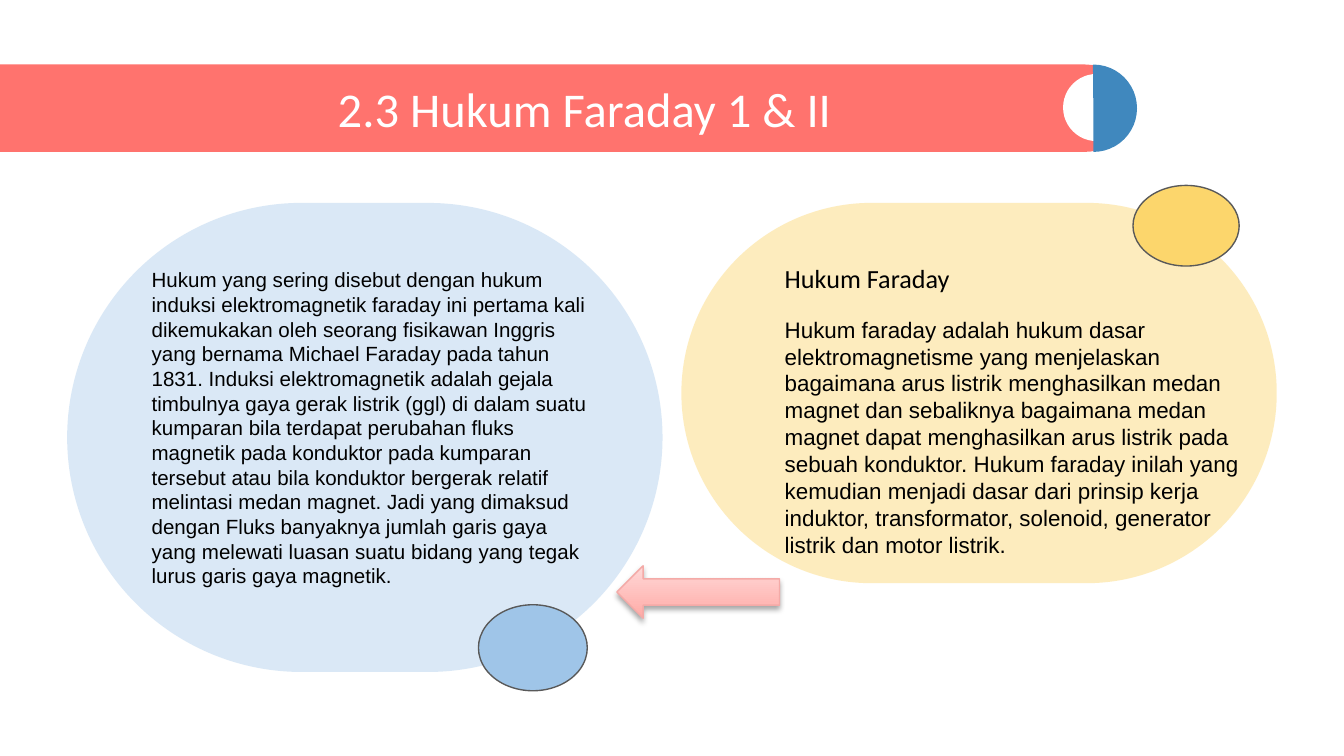
from dataclasses import dataclass
from typing import Optional

from lxml import etree
from pptx import Presentation
from pptx.dml.color import RGBColor
from pptx.enum.shapes import MSO_SHAPE
from pptx.enum.text import MSO_ANCHOR, PP_ALIGN
from pptx.oxml.ns import qn
from pptx.util import Emu, Pt

ROUNDED = MSO_SHAPE.ROUNDED_RECTANGLE
OVAL = MSO_SHAPE.OVAL
PIE = MSO_SHAPE.PIE
RIGHT_ARROW = MSO_SHAPE.RIGHT_ARROW
LEFT = PP_ALIGN.LEFT
CENTER = PP_ALIGN.CENTER
TOP = MSO_ANCHOR.TOP
MIDDLE = MSO_ANCHOR.MIDDLE

EMU_PER_PX = 9144
SLIDE_WIDTH = 1000
INSET = 10

CORAL = RGBColor(0xFF, 0x73, 0x6E)
WHITE = RGBColor(0xFF, 0xFF, 0xFF)
BLACK = RGBColor(0x00, 0x00, 0x00)
BLUE = RGBColor(0x40, 0x88, 0xBE)
SKY = RGBColor(0x9F, 0xC5, 0xE8)
AMBER = RGBColor(0xFB, 0xBE, 0x18)
YELLOW = RGBColor(0xFC, 0xD6, 0x6C)
GRAY = RGBColor(0x59, 0x59, 0x59)
PINK = RGBColor(0xFF, 0xAA, 0xA6)
PALE_PINK = RGBColor(0xFF, 0xD9, 0xD8)
PINK_OUTLINE = RGBColor(0xF4, 0xAA, 0xA7)


@dataclass(frozen=True)
class Figure:
    kind: MSO_SHAPE
    box: tuple[int, int, int, int]
    fill: RGBColor
    opacity: int = 100
    outline: Optional[RGBColor] = None
    adjustments: tuple[float, ...] = ()
    rotation: int = 0


@dataclass(frozen=True)
class Label:
    text: str
    box: tuple[int, int, int, int]
    size: int
    font: str
    color: RGBColor = BLACK
    align: PP_ALIGN = LEFT
    anchor: MSO_ANCHOR = TOP
    top_inset: int = INSET


BANNER = [
    Figure(ROUNDED, (-32, 48, 872, 65), CORAL, adjustments=(0.5,)),
    Figure(OVAL, (791, 55, 50, 50), WHITE, rotation=180),
    Figure(PIE, (781, 48, 65, 65), BLUE, adjustments=(53.67, 162), rotation=180),
]
PANELS = [
    Figure(ROUNDED, (50, 151, 443, 349), SKY, opacity=38, adjustments=(0.5,)),
    Figure(ROUNDED, (507, 151, 443, 283), AMBER, opacity=28, adjustments=(0.5,)),
]
ACCENTS = [
    Figure(OVAL, (843, 138, 79, 60), YELLOW, outline=GRAY),
    Figure(OVAL, (356, 450, 81, 64), SKY, outline=GRAY),
]
ARROW = Figure(RIGHT_ARROW, (459, 421, 121, 39), PINK, outline=PINK_OUTLINE)

HISTORY = (
    "Hukum yang sering disebut dengan hukum induksi elektromagnetik faraday ini "
    "pertama kali dikemukakan oleh seorang fisikawan Inggris yang bernama Michael "
    "Faraday pada tahun 1831. Induksi elektromagnetik adalah gejala timbulnya gaya "
    "gerak listrik (ggl) di dalam suatu kumparan bila terdapat perubahan fluks "
    "magnetik pada konduktor pada kumparan tersebut atau bila konduktor bergerak "
    "relatif melintasi medan magnet. Jadi yang dimaksud dengan Fluks banyaknya "
    "jumlah garis gaya yang melewati luasan suatu bidang yang tegak lurus garis "
    "gaya magnetik."
)
DEFINITION = (
    "Hukum faraday adalah hukum dasar elektromagnetisme yang menjelaskan bagaimana "
    "arus listrik menghasilkan medan magnet dan sebaliknya bagaimana medan magnet "
    "dapat menghasilkan arus listrik pada sebuah konduktor. Hukum faraday inilah "
    "yang kemudian menjadi dasar dari prinsip kerja induktor, transformator, "
    "solenoid, generator listrik dan motor listrik."
)
LABELS = [
    Label(HISTORY, (103, 189, 347, 281), 11, "Arial"),
    Label("Hukum Faraday", (574, 185, 311, 48), 14, "Calibri"),
    Label(DEFINITION, (574, 204, 362, 89), 12, "Arial", top_inset=31),
    Label("2.3 Hukum Faraday 1 & II", (79, 60, 712, 41), 26, "Calibri",
          WHITE, CENTER, MIDDLE),
]


def px(length: int) -> Emu:
    return Emu(length * EMU_PER_PX)


def set_opacity(color_element, percent: int) -> None:
    etree.SubElement(color_element, qn("a:alpha"), val=str(percent * 1000))


def draw_figure(slide, figure: Figure):
    shape = slide.shapes.add_shape(figure.kind, *map(px, figure.box))
    shape.shadow.inherit = False
    shape.rotation = figure.rotation
    for index, value in enumerate(figure.adjustments):
        shape.adjustments[index] = value
    shape.fill.solid()
    shape.fill.fore_color.rgb = figure.fill
    if figure.opacity < 100:
        fill = shape.element.spPr.find(qn("a:solidFill"))
        set_opacity(fill[0], figure.opacity)
    if figure.outline is None:
        shape.line.fill.background()
    else:
        shape.line.color.rgb = figure.outline
        shape.line.width = Pt(0.75)
    return shape


def draw_arrow(slide, figure: Figure) -> None:
    shape = draw_figure(slide, figure)
    shape.fill.gradient()
    shape.fill.gradient_angle = 90
    for stop, color in zip(shape.fill.gradient_stops, (PINK, PALE_PINK)):
        stop.color.rgb = color
    properties = shape.element.spPr
    properties.find(qn("a:xfrm")).set("flipH", "1")
    shadow = etree.SubElement(
        properties.find(qn("a:effectLst")), qn("a:outerShdw"),
        blurRad=str(Pt(3.1)), dist=str(Pt(1.8)), dir="5400000", rotWithShape="0",
    )
    set_opacity(etree.SubElement(shadow, qn("a:srgbClr"), val=str(BLACK)), 35)


def draw_label(slide, label: Label) -> None:
    frame = slide.shapes.add_textbox(*map(px, label.box)).text_frame
    frame.word_wrap = True
    frame.vertical_anchor = label.anchor
    frame.margin_left = frame.margin_right = frame.margin_bottom = px(INSET)
    frame.margin_top = px(label.top_inset)
    paragraph = frame.paragraphs[0]
    paragraph.text = label.text
    paragraph.alignment = label.align
    paragraph.font.name = label.font
    paragraph.font.size = Pt(label.size)
    paragraph.font.color.rgb = label.color


def main() -> None:
    presentation = Presentation()
    presentation.slide_width = px(SLIDE_WIDTH)
    presentation.slide_height = Emu(px(SLIDE_WIDTH) * 9 // 16)
    slide = presentation.slides.add_slide(presentation.slide_layouts[6])
    for figure in BANNER + PANELS + ACCENTS:
        draw_figure(slide, figure)
    for label in LABELS:
        draw_label(slide, label)
    draw_arrow(slide, ARROW)
    presentation.save("out.pptx")


if __name__ == "__main__":
    main()
